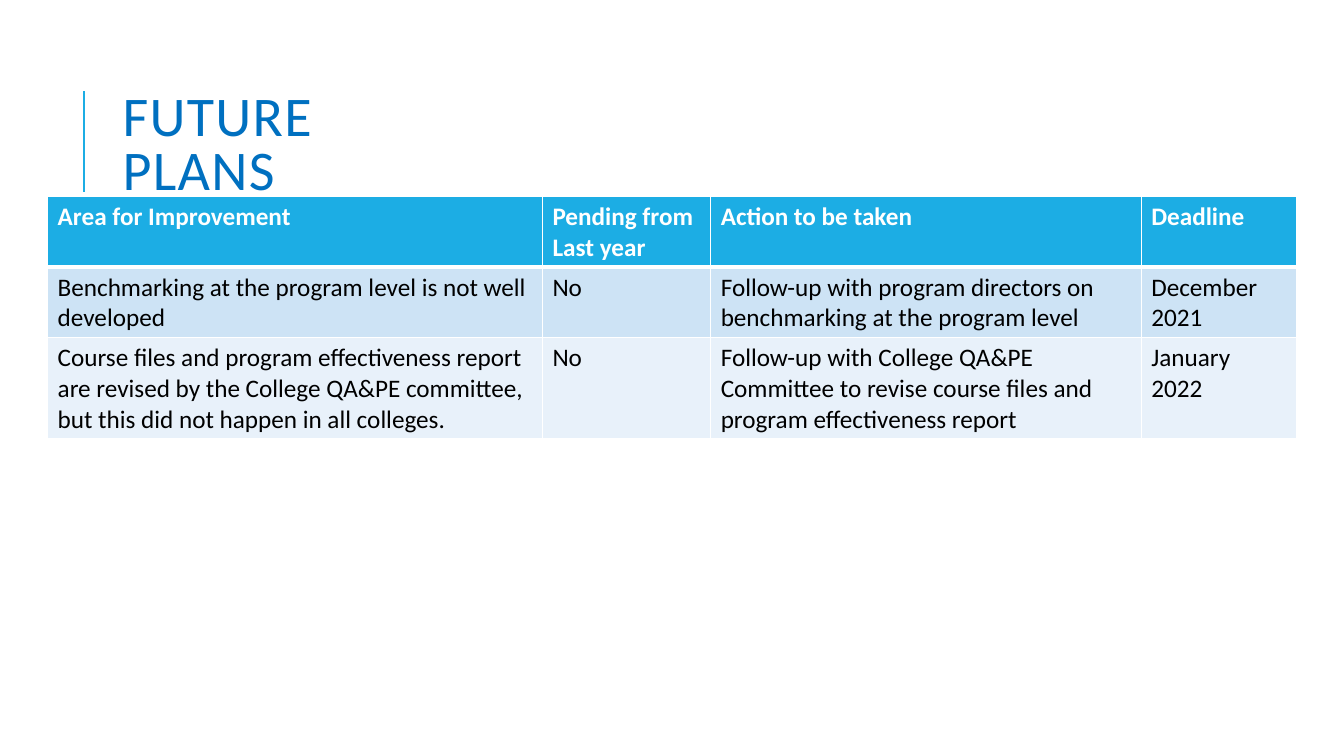
from dataclasses import dataclass
from typing import Any

from lxml import etree
from pptx import Presentation
from pptx.dml import color
from pptx.enum import shapes, text
from pptx.oxml import ns
from pptx.util import Cm, Pt


@dataclass(frozen=True)
class Theme:
    font: str = "Calibri"
    head: str = "1CADE4"
    title: str = "0070C0"
    white: str = "FFFFFF"
    black: str = "000000"
    bands: tuple[str, str] = ("CDE3F5", "E8F1FA")
    big: float = 40
    small: float = 18


@dataclass(frozen=True)
class Plan:
    area: str
    pending: str
    action: str
    due: str

    def texts(self) -> tuple[str, ...]:
        return self.area, self.pending, self.action, self.due


THEME = Theme()
WIDTHS = (12.47, 4.24, 10.85, 3.91)
ROW = 1.04
HEAD = Plan("Area for Improvement", "Pending from Last year",
            "Action to be taken", "Deadline")
PLANS = (
    Plan("Benchmarking at the program level is not well developed", "No",
         "Follow-up with program directors on benchmarking at the program level",
         "December 2021"),
    Plan("Course files and program effectiveness report are revised by the "
         "College QA&PE committee, but this did not happen in all colleges.", "No",
         "Follow-up with College QA&PE Committee to revise course files and "
         "program effectiveness report", "January 2022"),
)


def apply(item: Any, values: dict[str, Any]) -> None:
    for name, value in values.items():
        setattr(item, name, value)


def write(para: Any, words: str, size: float, tint: str, bold: bool = False) -> Any:
    run = para.add_run()
    run.text = words
    apply(run.font, {"name": THEME.font, "size": Pt(size), "bold": bold})
    run.font.color.rgb = color.RGBColor.from_string(tint)
    return run


def edge(cell: Any, side: str, width: float) -> None:
    props = cell._tc.get_or_add_tcPr()
    line = etree.SubElement(props, ns.qn(f"a:ln{side}"), w=str(Pt(width)))
    fill = etree.SubElement(line, ns.qn("a:solidFill"))
    etree.SubElement(fill, ns.qn("a:srgbClr"), val=THEME.white)


def draw_title(slide: Any) -> None:
    rule = slide.shapes.add_connector(
        shapes.MSO_CONNECTOR.STRAIGHT, Cm(2.11), Cm(4.83), Cm(2.11), Cm(2.29))
    rule.line.width = Pt(1.5)
    rule.line.color.rgb = color.RGBColor.from_string(THEME.head)
    etree.SubElement(rule._element.spPr, ns.qn("a:effectLst"))
    box = slide.shapes.add_textbox(Cm(2.84), Cm(1.63), Cm(8.71), Cm(4.17))
    apply(box.text_frame, {"word_wrap": True,
                           "vertical_anchor": text.MSO_ANCHOR.MIDDLE})
    para = box.text_frame.paragraphs[0]
    para.line_spacing = 0.8
    run = write(para, "FUTURE PLANS", THEME.big, THEME.title)
    run._r.get_or_add_rPr().set("spc", "100")


def draw_table(slide: Any) -> None:
    rows = (HEAD, *PLANS)
    grid = slide.shapes.add_table(
        len(rows), len(WIDTHS), Cm(1.2), Cm(4.95),
        Cm(sum(WIDTHS)), Cm(ROW * len(rows))).table
    for col, width in zip(grid.columns, WIDTHS):
        col.width = Cm(width)
    for i, plan in enumerate(rows):
        grid.rows[i].height = Cm(ROW)
        top = i == 0
        back = THEME.head if top else THEME.bands[(i - 1) % 2]
        for j, words in enumerate(plan.texts()):
            cell = grid.cell(i, j)
            sides = {"L": 1, "R": 1, "T": 3 if i == 1 else 1, "B": 3 if top else 1}
            for side, width in sides.items():
                edge(cell, side, width)
            cell.fill.solid()
            cell.fill.fore_color.rgb = color.RGBColor.from_string(back)
            write(cell.text_frame.paragraphs[0], words, THEME.small,
                  THEME.white if top else THEME.black, top)


def main() -> None:
    deck = Presentation()
    apply(deck, {"slide_width": Cm(33.87), "slide_height": Cm(19.05)})
    slide = deck.slides.add_slide(deck.slide_layouts[6])
    draw_title(slide)
    draw_table(slide)
    deck.save("out.pptx")


if __name__ == "__main__":
    main()
